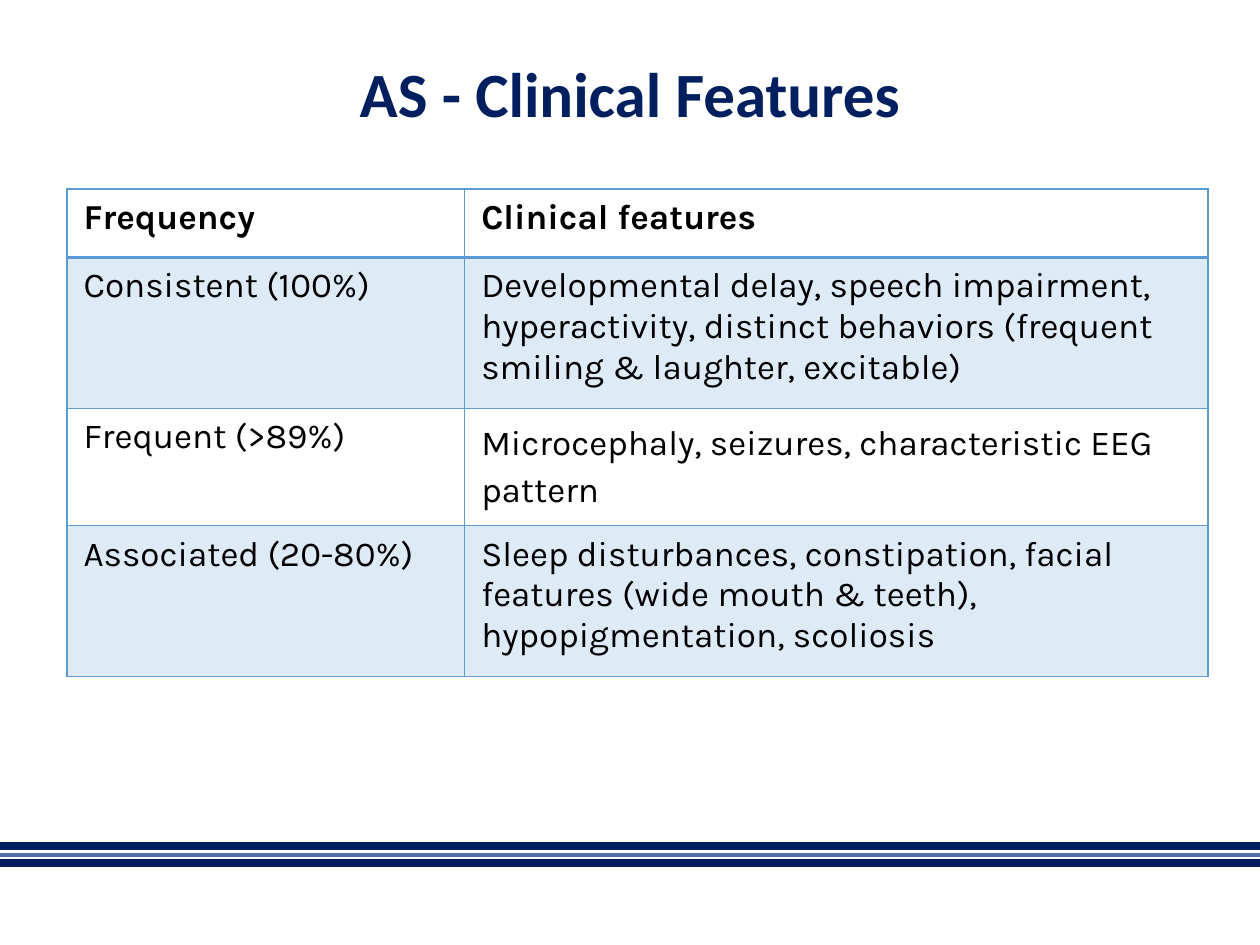
import lxml.etree
import pptx
import pptx.dml.color
import pptx.enum.shapes
import pptx.enum.text
import pptx.oxml.ns
import pptx.util

Pt = pptx.util.Pt
qn = pptx.oxml.ns.qn
COLORS = {"navy": "001F5F", "steel": "5070A7", "sky": "5B9BD5", "black": "000000"}
ROWS = [
    ("Frequency", "Clinical features"),
    ("Consistent (100%)", "Developmental delay, speech impairment, hyperactivity, "
     "distinct behaviors (frequent smiling & laughter, excitable)"),
    ("Frequent (>89%)", "Microcephaly, seizures, characteristic EEG pattern"),
    ("Associated (20-80%)", "Sleep disturbances, constipation, facial features "
     "(wide mouth & teeth), hypopigmentation, scoliosis"),
]


def color(name):
    """Return the named colour."""
    return pptx.dml.color.RGBColor.from_string(COLORS[name])


class Deck:
    """Hold the style and the current slide."""

    def __init__(self, head, body):
        """Start a deck with one blank slide."""
        self.head, self.body = head, body
        self.file = pptx.Presentation()
        self.file.slide_width, self.file.slide_height = Pt(720), Pt(540)
        self.slide = self.file.slides.add_slide(self.file.slide_layouts[6])

    def style(self, para, face, size, tint, bold):
        """Format the runs of a paragraph."""
        for run in para.runs:
            run.font.name, run.font.size, run.font.bold = face, Pt(size), bold
            run.font.color.rgb = color(tint)

    def rule(self, y, tint, width):
        """Draw a line across the slide."""
        line = self.slide.shapes.add_connector(
            pptx.enum.shapes.MSO_CONNECTOR.STRAIGHT, Pt(0), Pt(y), Pt(720), Pt(y))
        line.line.color.rgb, line.line.width = color(tint), Pt(width)
        lxml.etree.SubElement(line._element.spPr, qn("a:effectLst"))

    def title(self, text, left, top, width, height):
        """Add the centred title."""
        frame = self.slide.shapes.add_textbox(
            Pt(left), Pt(top), Pt(width), Pt(height)).text_frame
        frame.word_wrap = True
        frame.margin_left = frame.margin_right = Pt(7.2)
        frame.margin_top = frame.margin_bottom = Pt(7.2)
        frame.text = text
        para = frame.paragraphs[0]
        para.alignment = pptx.enum.text.PP_ALIGN.CENTER
        para.line_spacing = 0.9
        self.style(para, self.head, 36, "navy", True)

    def border(self, cell, side, width):
        """Draw one edge of a cell."""
        edge = lxml.etree.SubElement(
            cell._tc.get_or_add_tcPr(), qn("a:ln" + side), w=str(Pt(width)))
        fill = lxml.etree.SubElement(edge, qn("a:solidFill"))
        lxml.etree.SubElement(fill, qn("a:srgbClr"), val=COLORS["sky"])

    def cell(self, cell, text, row):
        """Fill one cell with text, edges and shade."""
        cell.margin_left = cell.margin_right = Pt(9.6)
        cell.margin_top = cell.margin_bottom = Pt(4.8)
        cell.text_frame.text = text
        self.style(cell.text_frame.paragraphs[0], self.body, 20, "black", row == 0)
        for side in "LRTB":
            heavy = (row, side) in ((0, "B"), (1, "T"))
            self.border(cell, side, 2 if heavy else 1)
        if row % 2:
            cell.fill.solid()
            cell.fill.fore_color.rgb = color("sky")
            tint = cell._tc.tcPr.find(qn("a:solidFill"))[0]
            lxml.etree.SubElement(tint, qn("a:alpha"), val="20000")
        else:
            cell.fill.background()

    def table(self, rows, left, top, widths, heights):
        """Add a table and return it."""
        grid = self.slide.shapes.add_table(
            len(rows), len(widths), Pt(left), Pt(top),
            Pt(sum(widths)), Pt(sum(heights))).table
        grid.first_row = grid.horz_banding = False
        for col, width in zip(grid.columns, widths):
            col.width = Pt(width)
        for i, (texts, height) in enumerate(zip(rows, heights)):
            grid.rows[i].height = Pt(height)
            for j, text in enumerate(texts):
                self.cell(grid.cell(i, j), text, i)
        return grid


def main():
    """Build and save the slide."""
    deck = Deck("Calibri", "Karla")
    for y, tint, width in ((483.6, "navy", 4.5), (488.4, "steel", 2.25),
                           (493.2, "navy", 4.5)):
        deck.rule(y, tint, width)
    deck.title("AS - Clinical Features", 49.5, 28.8, 621, 104.4)
    grid = deck.table(ROWS, 38.16, 108, (227.3, 424.8), (39, 86.4, 66.9, 86.4))
    grid.cell(2, 1).text_frame.paragraphs[0].line_spacing = 1.15
    deck.file.save("out.pptx")


if __name__ == "__main__":
    main()
